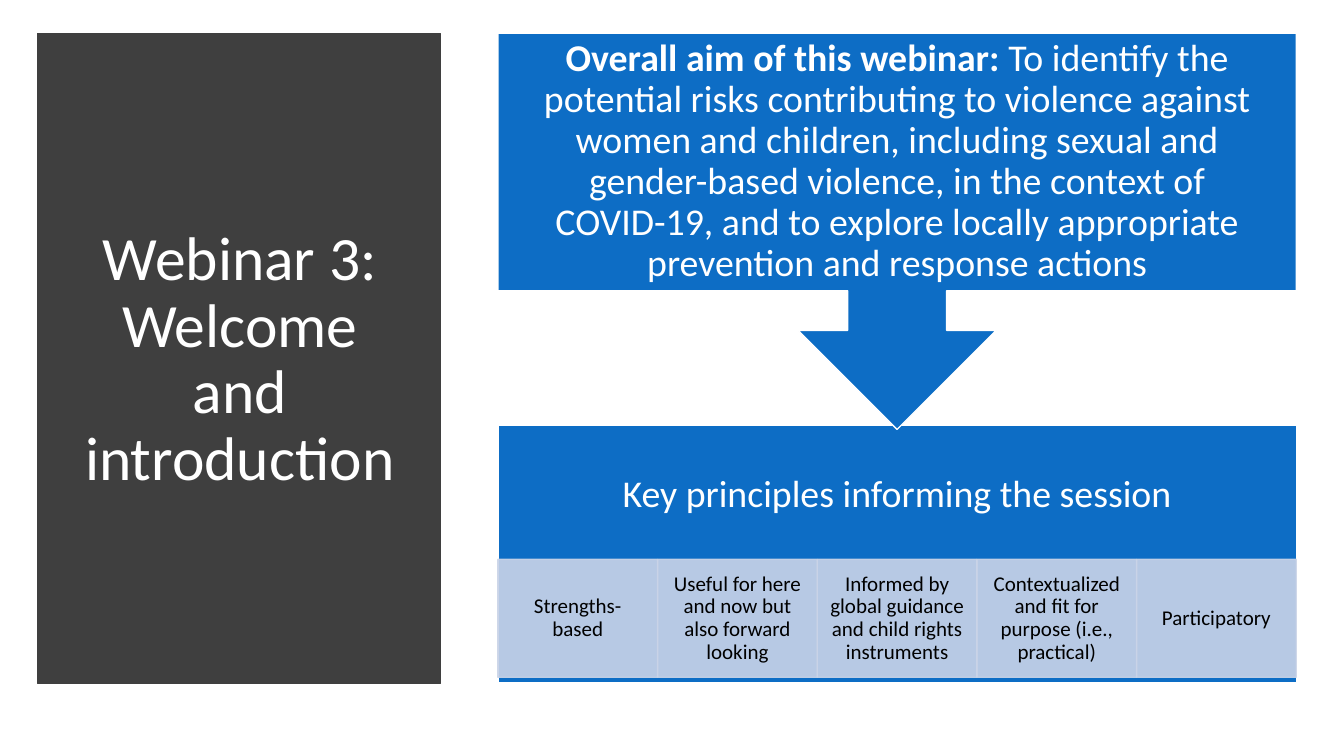
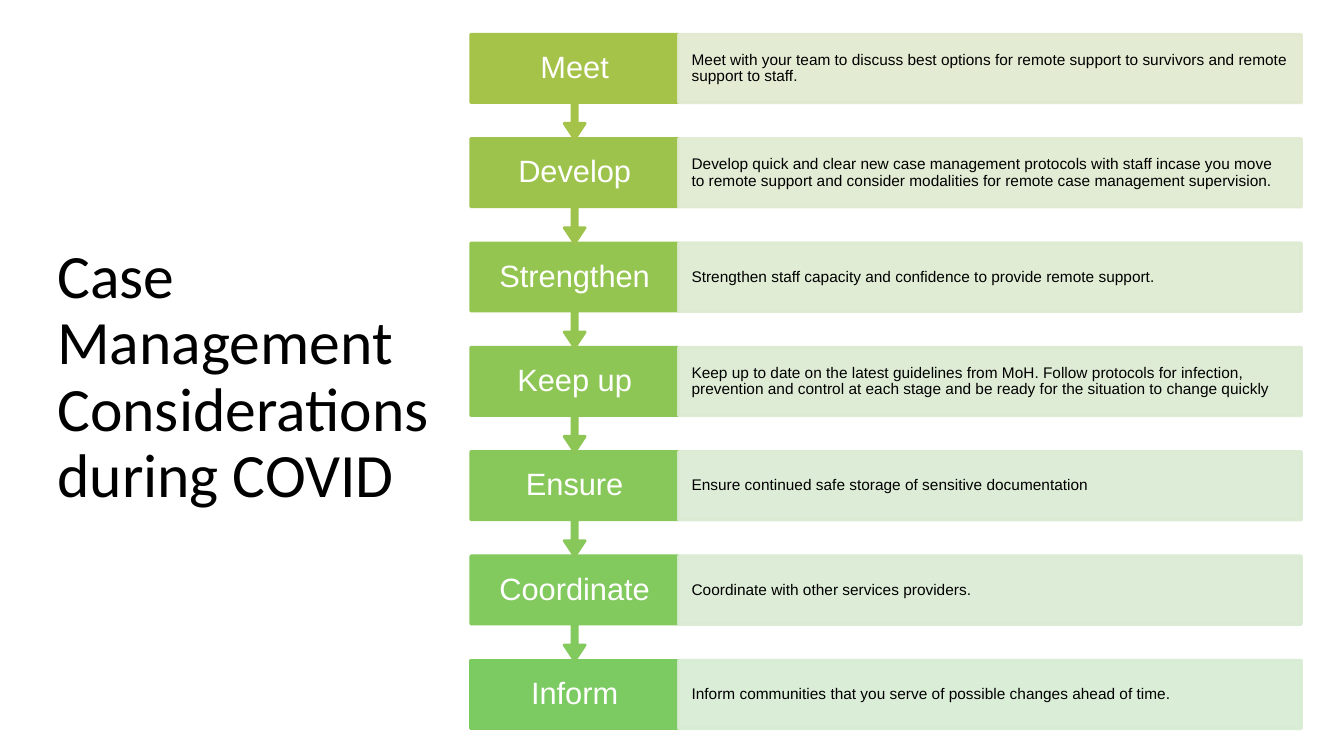
from lxml import etree
from pptx import Presentation
from pptx import util as u
from pptx.dml.color import RGBColor
from pptx.enum import shapes, text
from pptx.oxml import ns

# Palette
WHITE = RGBColor(0xFF, 0xFF, 0xFF)
BLACK = RGBColor(0x00, 0x00, 0x00)
CHARCOAL = RGBColor(0x3F, 0x3F, 0x3F)
BLUE = RGBColor(0x0D, 0x6D, 0xC5)
PALE_BLUE = RGBColor(0xCA, 0xD4, 0xE8)
GREENS = [RGBColor.from_string(c) for c in (
    "A5C249", "9DC34D", "95C551", "8EC656", "88C75A", "82C95E", "7CCA62")]
PALE_GREENS = [RGBColor.from_string(c) for c in (
    "E1E9CF", "DFEAD0", "DDEAD0", "DCEAD1", "DAEBD2", "D9EBD2", "D7ECD3")]

# Text styles; inset is (horizontal, vertical) in inches
LEFT, CENTER = text.PP_ALIGN.LEFT, text.PP_ALIGN.CENTER
STYLES = {
    "title": dict(size=44, name="Calibri", color=BLACK, align=LEFT, inset=(0.1, 0.05)),
    "panel title": dict(size=44, name="Calibri", color=WHITE, align=CENTER, inset=(0.1, 0.05)),
    "heading": dict(size=27, name="Calibri", color=WHITE, align=CENTER, inset=(0.21, 0.05)),
    "principle": dict(size=15, name="Calibri", color=BLACK, align=CENTER, inset=(0.12, 0.02)),
    "step": dict(size=22, name="Arial", color=WHITE, align=CENTER, inset=(0.15, 0.05)),
    "detail": dict(size=11, name="Arial", color=BLACK, align=LEFT, inset=(0.13, 0.05)),
}
RECT = shapes.MSO_SHAPE.RECTANGLE
CALLOUT = shapes.MSO_SHAPE.UP_ARROW_CALLOUT


class Deck:
    """Holds the presentation and current slide; boxes are in % of the slide."""

    def __init__(self):
        self.prs = Presentation()
        self.prs.slide_width, self.prs.slide_height = u.Inches(13.33), u.Inches(7.5)
        self.s = None

    def new_slide(self):
        self.s = self.prs.slides.add_slide(self.prs.slide_layouts[6])

    def place(self, box):
        x, y, w, h = box
        sw, sh = self.prs.slide_width / 100, self.prs.slide_height / 100
        return [round(v) for v in (x * sw, y * sh, w * sw, h * sh)]

    def shape(self, box, fill, line=None, width=1, kind=RECT, opacity=100):
        sp = self.s.shapes.add_shape(kind, *self.place(box))
        sp.shadow.inherit = False
        sp.fill.solid()
        sp.fill.fore_color.rgb = fill
        sp.line.color.rgb = line or fill
        sp.line.width = u.Pt(width)
        if opacity < 100:
            for clr in sp.element.spPr.iter(ns.qn("a:srgbClr")):
                etree.SubElement(clr, ns.qn("a:alpha"), val=str(opacity * 1000))
        return sp

    def down_callout(self, box, adjustments, fill, line=None, width=1):
        sp = self.shape(box, fill, line, width, CALLOUT)
        sp.rotation = 180
        for i, value in enumerate(adjustments):
            sp.adjustments[i] = value

    def set_text(self, sp, style, words, lead=""):
        """Fill a shape with one paragraph, with an optional bold lead."""
        st = STYLES[style]
        tf = sp.text_frame
        dx, dy = (u.Inches(v) for v in st["inset"])
        frame = dict(word_wrap=True, vertical_anchor=text.MSO_ANCHOR.MIDDLE,
                     margin_left=dx, margin_right=dx, margin_top=dy, margin_bottom=dy)
        for key, value in frame.items():
            setattr(tf, key, value)
        p = tf.paragraphs[0]
        p.alignment, p.line_spacing = st["align"], 0.9
        for part, bold in ((lead, True), (words, False)):
            if part:
                r = p.add_run()
                r.text = part
                for key, value in dict(size=u.Pt(st["size"]), name=st["name"], bold=bold).items():
                    setattr(r.font, key, value)
                r.font.color.rgb = st["color"]

    def label(self, box, style, words, lead=""):
        self.set_text(self.s.shapes.add_textbox(*self.place(box)), style, words, lead)


def welcome_slide(deck):
    deck.new_slide()
    # Title panel
    deck.shape((2.78, 4.4, 30, 86), CHARCOAL)
    deck.label((4.88, 9.33, 25.95, 76.67), "panel title", "Webinar 3: Welcome and introduction")

    # Key principles
    x, w = 37.05, 59.4
    deck.shape((x, 56.27, w, 34), BLUE, WHITE)
    deck.label((x, 56.27, w, 18.4), "heading", "Key principles informing the session")
    principles = [
        "Strengths-based",
        "Useful for here and now but also forward looking",
        "Informed by global guidance and child rights instruments",
        "Contextualized and fit for purpose (i.e., practical)",
        "Participatory",
    ]
    col = w / len(principles)
    for i, words in enumerate(principles):
        cell = deck.shape((x + i * col, 74, col, 15.6), PALE_BLUE, opacity=90)
        deck.set_text(cell, "principle", words)

    # Overall aim
    deck.down_callout((x, 4.4, w, 52.4), (0.25, 0.25, 0.25, 0.65), BLUE, WHITE)
    deck.label((x, 4.4, w, 34), "heading",
               "To identify the potential risks contributing to violence against women and "
               "children, including sexual and gender-based violence, in the context of "
               "COVID-19, and to explore locally appropriate prevention and response actions",
               lead="Overall aim of this webinar: ")


def case_management_slide(deck):
    deck.new_slide()
    deck.label((3.53, 19.6, 32.85, 60.8), "title", "Case Management Considerations during COVID")
    steps = [
        ("Meet", "Meet with your team to discuss best options for remote support to "
                 "survivors and remote support to staff."),
        ("Develop", "Develop quick and clear new case management protocols with staff incase "
                    "you move to remote support and consider modalities for remote case "
                    "management supervision."),
        ("Strengthen", "Strengthen staff capacity and confidence to provide remote support."),
        ("Keep up", "Keep up to date on the latest guidelines from MoH. Follow protocols for "
                    "infection, prevention and control at each stage and be ready for the "
                    "situation to change quickly"),
        ("Ensure", "Ensure continued safe storage of sensitive documentation"),
        ("Coordinate", "Coordinate with other services providers."),
        ("Inform", "Inform communities that you serve of possible changes ahead of time."),
    ]
    # Steps are stacked from the bottom up so each arrow tip lies on the next box
    x, w, detail_w = 35.03, 15.45, 46.35
    top, pitch, h = 4.53, 13.8, 9.07
    last = len(steps) - 1
    for i in range(last, -1, -1):
        name, detail = steps[i]
        y = top + i * pitch
        if i == last:
            deck.shape((x, y, w, h), GREENS[i], width=2)
        else:
            deck.down_callout((x, y, w, 13.87), (0.05, 0.1, 0.15, 0.65), GREENS[i], width=2)
        deck.label((x, y, w, h), "step", name)
        bar = deck.shape((x + w, y, detail_w, h), PALE_GREENS[i], width=2, opacity=90)
        deck.set_text(bar, "detail", detail)


def main():
    deck = Deck()
    welcome_slide(deck)
    case_management_slide(deck)
    deck.prs.save("out.pptx")


if __name__ == "__main__":
    main()
